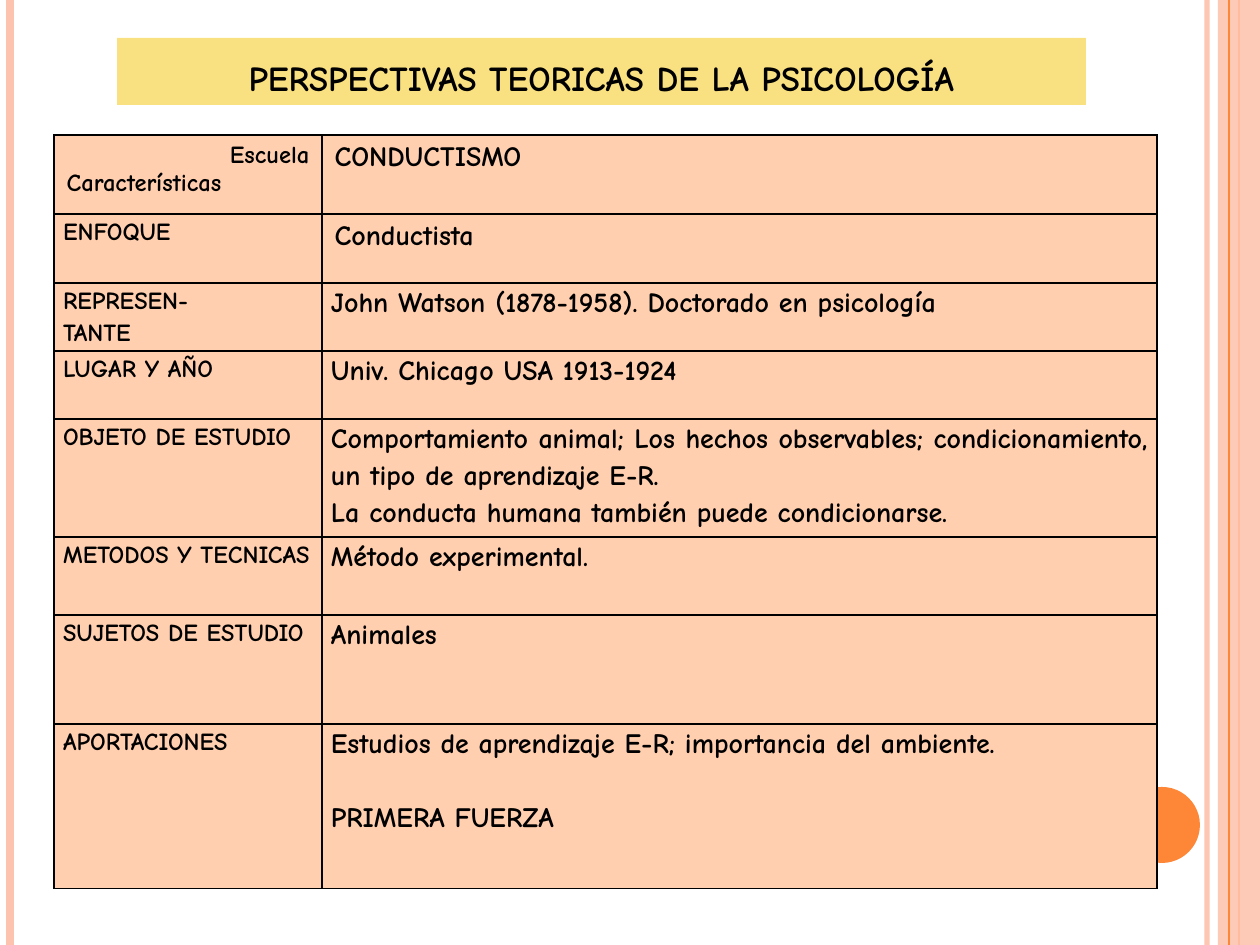
from typing import NamedTuple

from lxml import etree
from pptx import Presentation, util as u
from pptx.dml.color import RGBColor
from pptx.enum import shapes, text
from pptx.oxml import ns

PX = 914400 / 126  # EMU in one px
WIDTH, HEIGHT = 1260, 945
FONT = "Comic Neue"
BLACK = RGBColor(0x00, 0x00, 0x00)
PINK = RGBColor(0xFE, 0xC3, 0xAE)
ORANGE = RGBColor(0xFE, 0x86, 0x37)
YELLOW = RGBColor(0xF9, 0xE1, 0x81)
PEACH = RGBColor(0xFF, 0xCF, 0xAF)

LEFT, RIGHT = text.PP_ALIGN.LEFT, text.PP_ALIGN.RIGHT
CENTER, JUSTIFY = text.PP_ALIGN.CENTER, text.PP_ALIGN.JUSTIFY
TIGHT = {"margin_left": 9, "margin_top": 0, "margin_right": 9, "margin_bottom": 0}


class Stripe(NamedTuple):
    x: int
    weight: float
    color: RGBColor
    alpha: int = 100


class Para(NamedTuple):
    words: str
    align: text.PP_ALIGN = LEFT
    before: int = 0


class Row(NamedTuple):
    height: int
    trait: list[Para]
    answer: list[Para]


def px(value: int) -> int:
    return round(value * PX)


def box(*lengths: int) -> list[int]:
    return [px(length) for length in lengths]


def set_alpha(properties, percent: int) -> None:
    color = next(properties.iter(ns.qn("a:srgbClr")))
    etree.SubElement(color, ns.qn("a:alpha"), val=str(percent * 1000))


def draw_stripe(slide, stripe: Stripe) -> None:
    line = slide.shapes.add_connector(
        shapes.MSO_CONNECTOR.STRAIGHT, *box(stripe.x, 0, stripe.x, HEIGHT))
    line.line.color.rgb = stripe.color
    line.line.width = u.Pt(stripe.weight)
    properties = line._element.spPr
    etree.SubElement(properties, ns.qn("a:effectLst"))
    if stripe.alpha < 100:
        set_alpha(properties, stripe.alpha)


def draw_solid(slide, kind, bounds: list[int], color: RGBColor, alpha: int = 100) -> None:
    solid = slide.shapes.add_shape(kind, *bounds)
    solid.shadow.inherit = False
    solid.fill.solid()
    solid.fill.fore_color.rgb = color
    solid.line.fill.background()
    if alpha < 100:
        set_alpha(solid._element.spPr, alpha)


def write(frame, paras: list[Para], size: int, spacing: float = 1.0) -> None:
    for index, para in enumerate(paras):
        paragraph = frame.add_paragraph() if index else frame.paragraphs[0]
        layout = {"alignment": para.align, "line_spacing": spacing,
                  "space_before": u.Pt(para.before)}
        for name, value in layout.items():
            setattr(paragraph, name, value)
        run = paragraph.add_run()
        run.text = para.words
        for name, value in {"name": FONT, "size": u.Pt(size), "bold": True}.items():
            setattr(run.font, name, value)
        run.font.color.rgb = BLACK


def draw_borders(cell) -> None:
    properties = cell._tc.get_or_add_tcPr()
    for side in ("lnL", "lnR", "lnT", "lnB"):
        edge = etree.SubElement(properties, ns.qn(f"a:{side}"), w=str(u.Pt(1)))
        fill = etree.SubElement(edge, ns.qn("a:solidFill"))
        etree.SubElement(fill, ns.qn("a:srgbClr"), val=str(BLACK))


def draw_table(slide, left: int, top: int, widths: list[int], rows: list[Row]) -> None:
    total = sum(row.height for row in rows)
    table = slide.shapes.add_table(
        len(rows), len(widths), *box(left, top, sum(widths), total)).table
    table.first_row = table.horz_banding = False
    for column, width in zip(table.columns, widths):
        column.width = px(width)
    for r, row in enumerate(rows):
        table.rows[r].height = px(row.height)
        for c, (paras, size) in enumerate(((row.trait, 14), (row.answer, 16))):
            cell = table.cell(r, c)
            draw_borders(cell)
            cell.fill.solid()
            cell.fill.fore_color.rgb = PEACH
            # The heading row and "Conductista" keep the standard margins
            standard = r == 0 or (r, c) == (1, 1)
            if not standard:
                for name, value in TIGHT.items():
                    setattr(cell, name, px(value))
            write(cell.text_frame, paras, size, 1.0 if standard else 1.15)


STRIPES_BEHIND = [Stripe(1207, 3, PINK, 93), Stripe(10, 4.5, PINK), Stripe(1239, 1.5, ORANGE)]
STRIPE_FRONT = Stripe(1229, 0.75, ORANGE)

ROWS = [
    Row(79, [Para("Escuela", RIGHT), Para("Características")], [Para("CONDUCTISMO")]),
    Row(69, [Para("ENFOQUE")], [Para("Conductista")]),
    Row(68, [Para("REPRESEN-"), Para("TANTE")],
        [Para("John Watson (1878-1958). Doctorado en psicología", JUSTIFY)]),
    Row(68, [Para("LUGAR Y AÑO")], [Para("Univ. Chicago USA 1913-1924", JUSTIFY)]),
    Row(118, [Para("OBJETO DE ESTUDIO")],
        [Para("Comportamiento animal; Los hechos observables; condicionamiento, "
              "un tipo de aprendizaje E-R.", JUSTIFY),
         Para("La conducta humana también puede condicionarse.", JUSTIFY)]),
    Row(78, [Para("METODOS Y TECNICAS")], [Para("Método experimental.", JUSTIFY)]),
    Row(109, [Para("SUJETOS DE ESTUDIO")], [Para("Animales", JUSTIFY)]),
    Row(165, [Para("APORTACIONES")],
        [Para("Estudios de aprendizaje E-R; importancia del ambiente.", JUSTIFY),
         Para("PRIMERA FUERZA", JUSTIFY, before=21)]),
]


def main() -> None:
    deck = Presentation()
    deck.slide_width, deck.slide_height = box(WIDTH, HEIGHT)
    slide = deck.slides.add_slide(deck.slide_layouts[5])

    # Side stripes, band and dot
    for stripe in STRIPES_BEHIND:
        draw_stripe(slide, stripe)
    draw_solid(slide, shapes.MSO_SHAPE.RECTANGLE, box(1218, 0, 42, HEIGHT), PINK, 87)
    draw_stripe(slide, STRIPE_FRONT)
    draw_solid(slide, shapes.MSO_SHAPE.OVAL, box(1124, 787, 76, 76), ORANGE)

    # Title
    heading = slide.shapes.title
    heading.left, heading.top, heading.width, heading.height = box(117, 38, 969, 67)
    heading.fill.solid()
    heading.fill.fore_color.rgb = YELLOW
    frame_format = {"word_wrap": True, "auto_size": text.MSO_AUTO_SIZE.NONE,
                    "vertical_anchor": text.MSO_ANCHOR.BOTTOM}
    for name, value in frame_format.items():
        setattr(heading.text_frame, name, value)
    write(heading.text_frame, [Para("PERSPECTIVAS TEORICAS DE LA PSICOLOGÍA", CENTER)], 20)

    # Traits of the school
    draw_table(slide, 54, 135, [268, 835], ROWS)
    deck.save("out.pptx")


if __name__ == "__main__":
    main()
